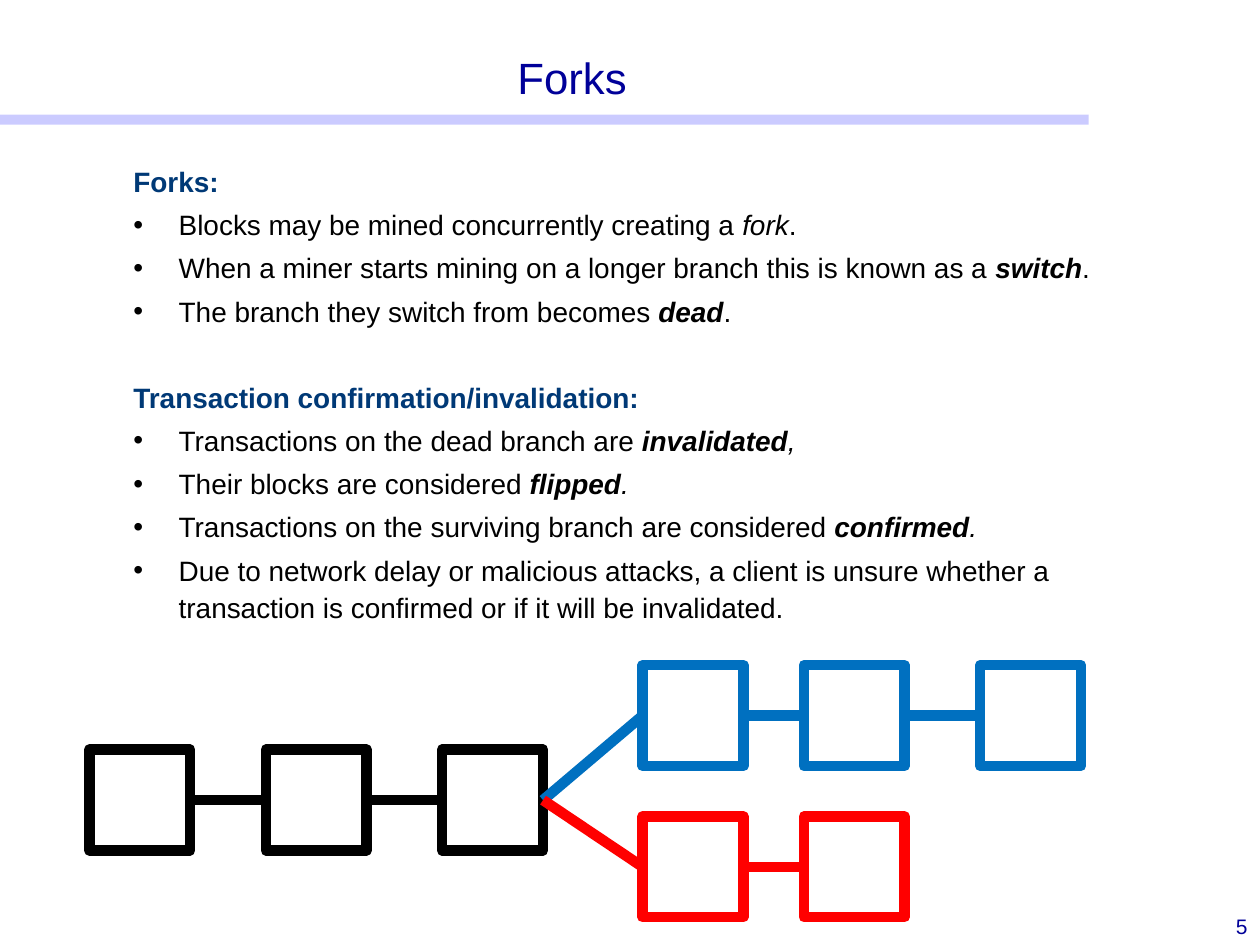
from lxml import etree
from pptx import Presentation
from pptx.dml.color import RGBColor
from pptx.enum.shapes import MSO_CONNECTOR, MSO_SHAPE
from pptx.enum.text import MSO_ANCHOR, PP_ALIGN
from pptx.oxml.ns import qn
from pptx.util import Inches, Pt

COLORS = {"title": "000099", "heading": "003976", "text": "000000", "bar": "9999FF",
          "block": "FFFFFF", "trunk": "000000", "longer": "0070C0", "dead": "FF0000"}
RGB = {name: RGBColor.from_string(value) for name, value in COLORS.items()}

presentation = Presentation()
presentation.slide_width, presentation.slide_height = Inches(10), Inches(7.5)
slide = presentation.slides.add_slide(presentation.slide_layouts[6])


def add_text(left, top, width, height, anchor=MSO_ANCHOR.TOP):
    box = slide.shapes.add_textbox(Inches(left), Inches(top), Inches(width), Inches(height))
    box.text_frame.word_wrap = True
    box.text_frame.vertical_anchor = anchor
    return box.text_frame


def add_run(paragraph, text, **formats):
    run = paragraph.add_run()
    run.text = text
    run.font.color.rgb = RGB[formats.pop("color")]
    for name, value in {"name": "Arial", **formats}.items():
        setattr(run.font, name, value)


# Bar under the title, half transparent
bar = slide.shapes.add_shape(MSO_SHAPE.RECTANGLE, 0, Inches(0.91), Inches(8.64), Inches(0.08))
bar.shadow.inherit = False
bar.line.fill.background()
bar.fill.solid()
bar.fill.fore_color.rgb = RGB["bar"]
bar_color = bar.fill._xPr.find(qn("a:solidFill"))[0]
etree.SubElement(bar_color, qn("a:alpha"), val="50000")

# Slide number and title
number = add_text(9.5, 7.2, 0.5, 0.3).paragraphs[0]
number.alignment = PP_ALIGN.RIGHT
add_run(number, "5", color="title", size=Pt(12))

title = add_text(0.5, 0.34, 8.08, 0.53, MSO_ANCHOR.BOTTOM).paragraphs[0]
title.alignment = PP_ALIGN.CENTER
title.line_spacing = 1.1
add_run(title, "Forks", color="title", size=Pt(25))

# Body: each section has a heading and bullets of (text, bold, italic) runs
SECTIONS = [
    ("Forks:", [
        [("Blocks may be mined concurrently creating a ", False, False),
         ("fork", False, True), (".", False, False)],
        [("When a miner starts mining on a longer branch this is known as a ", False, False),
         ("switch", True, True), (".", False, False)],
        [("The branch they switch from becomes ", False, False),
         ("dead", True, True), (".", False, False)],
    ]),
    ("Transaction confirmation/invalidation:", [
        [("Transactions on the dead branch are ", False, False),
         ("invalidated", True, True), (",", False, True)],
        [("Their blocks are considered ", False, False),
         ("flipped", True, True), (".", False, True)],
        [("Transactions on the surviving branch are considered ", False, False),
         ("confirmed", True, True), (".", False, True)],
        [("Due to network delay or malicious attacks, a client is unsure whether a "
          "transaction is confirmed or if it will be invalidated.", False, False)],
    ]),
]
body = add_text(0.82, 1.23, 8.08, 4.05)
for index, (heading, bullets) in enumerate(SECTIONS):
    paragraph = body.add_paragraph() if index else body.paragraphs[0]
    paragraph.line_spacing = 1.1
    paragraph.space_before = Pt(28.2 if index else 0)
    paragraph._p.get_or_add_pPr().set("marL", str(Inches(0.14)))
    add_run(paragraph, heading, color="heading", size=Pt(16), bold=True)
    for runs in bullets:
        paragraph = body.add_paragraph()
        paragraph.line_spacing = 1.1
        paragraph.space_before = Pt(3.6)
        properties = paragraph._p.get_or_add_pPr()
        properties.set("marL", str(Inches(0.5)))
        properties.set("indent", str(Inches(-0.36)))
        bullet_color = etree.SubElement(properties, qn("a:buClr"))
        etree.SubElement(bullet_color, qn("a:srgbClr"), val=COLORS["text"])
        etree.SubElement(properties, qn("a:buFont"), typeface="Arial")
        etree.SubElement(properties, qn("a:buChar"), char="•")
        for text, bold, italic in runs:
            add_run(paragraph, text, color="text", size=Pt(16), bold=bold, italic=italic)

# Block chains: the trunk forks into the longer and the dead branch
BLOCK = 0.8
CHAINS = [("trunk", 5.95, [0.71, 2.11, 3.51]),
          ("longer", 5.28, [5.1, 6.38, 7.78]),
          ("dead", 6.48, [5.1, 6.38])]
links = []
fork_point = None
for color, top, lefts in CHAINS:
    middle = top + BLOCK / 2
    for left in lefts:
        block = slide.shapes.add_shape(MSO_SHAPE.RECTANGLE, Inches(left), Inches(top),
                                       Inches(BLOCK), Inches(BLOCK))
        block.shadow.inherit = False
        block.fill.solid()
        block.fill.fore_color.rgb = RGB["block"]
        block.line.color.rgb = RGB[color]
        block.line.width = Pt(6)
        etree.SubElement(block.line._get_or_add_ln(), qn("a:round"))
    if fork_point:
        links.append((color, fork_point, (lefts[0], middle)))
    else:
        fork_point = (lefts[-1] + BLOCK, middle)
    links += [(color, (left + BLOCK, middle), (following, middle))
              for left, following in zip(lefts, lefts[1:])]

# Links between the blocks
for color, start, end in links:
    link = slide.shapes.add_connector(MSO_CONNECTOR.STRAIGHT,
                                      *[Inches(value) for value in start + end])
    link.line.color.rgb = RGB[color]
    link.line.width = Pt(6)
    etree.SubElement(link._element.spPr, qn("a:effectLst"))

presentation.save("out.pptx")
